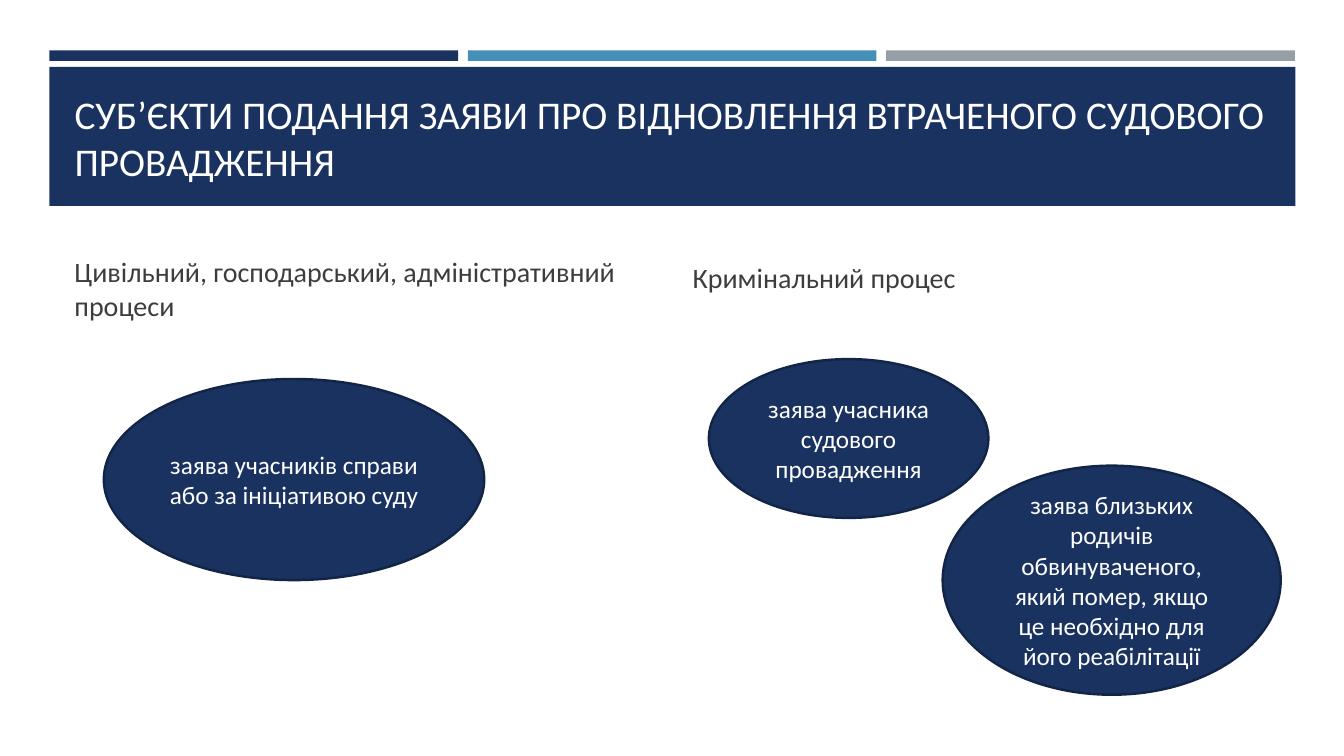
from pptx import Presentation
from pptx.dml.color import RGBColor
from pptx.enum.shapes import MSO_SHAPE
from pptx.enum.text import MSO_ANCHOR, MSO_AUTO_SIZE, PP_ALIGN
from pptx.util import Inches, Pt

RECT, OVAL = MSO_SHAPE.RECTANGLE, MSO_SHAPE.OVAL
TOP, MID, LOW = MSO_ANCHOR.TOP, MSO_ANCHOR.MIDDLE, MSO_ANCHOR.BOTTOM
LEFT, MIDDLE = PP_ALIGN.LEFT, PP_ALIGN.CENTER
FIXED = MSO_AUTO_SIZE.NONE
TITLE_ONLY = 5
COLORS = {"navy": "1A3260", "edge": "132547", "blue": "4590B8",
          "gray": "969FA7", "white": "FFFFFF", "ink": "3D3D3D"}


class Deck:
    """Draws styled items on one slide, placed in percent of its size."""

    def __init__(self):
        self.prs = Presentation()
        self.prs.slide_width = Inches(13.33)
        self.prs.slide_height = Inches(7.5)
        layout = self.prs.slide_layouts[TITLE_ONLY]
        self.slide = self.prs.slides.add_slide(layout)
        self.shapes = self.slide.shapes

    def color(self, name):
        return RGBColor.from_string(COLORS[name])

    def place(self, x, y, w, h):
        wide, high = self.prs.slide_width, self.prs.slide_height
        return [int(part * size / 100) for part, size in
                ((x, wide), (y, high), (w, wide), (h, high))]

    def letter(self, shape, text, size, color, align, anchor):
        frame = shape.text_frame
        frame.text = text
        look = {"word_wrap": True, "auto_size": FIXED,
                "vertical_anchor": anchor}
        for key, value in look.items():
            setattr(frame, key, value)
        para = frame.paragraphs[0]
        para.alignment = align
        font = para.runs[0].font
        for key, value in {"name": "Calibri", "size": Pt(size)}.items():
            setattr(font, key, value)
        font.color.rgb = self.color(color)

    def form(self, kind, box, fill):
        shape = self.shapes.add_shape(kind, *self.place(*box))
        shape.shadow.inherit = False
        shape.fill.solid()
        shape.fill.fore_color.rgb = self.color(fill)
        shape.line.fill.background()
        return shape

    def title(self, text, box):
        shape = self.shapes.title
        keys = ("left", "top", "width", "height")
        for key, value in zip(keys, self.place(*box)):
            setattr(shape, key, value)
        self.letter(shape, text, 28, "white", LEFT, LOW)
        shape.element.getparent().append(shape.element)

    def label(self, text, box):
        shape = self.shapes.add_textbox(*self.place(*box))
        self.letter(shape, text, 20, "ink", LEFT, TOP)

    def oval(self, text, box):
        shape = self.form(OVAL, box, "navy")
        shape.line.color.rgb = self.color("edge")
        shape.line.width = Pt(1.75)
        self.letter(shape, text, 18, "white", MIDDLE, MID)


def main():
    deck = Deck()
    for col, fill in enumerate(("navy", "blue", "gray")):
        deck.form(RECT, (3.68 + 31.13 * col, 6.67, 30.4, 1.4), fill)
    deck.form(RECT, (3.68, 8.85, 92.7, 18.4), "navy")
    deck.title("СУБ’ЄКТИ ПОДАННЯ ЗАЯВИ ПРО ВІДНОВЛЕННЯ ВТРАЧЕНОГО "
               "СУДОВОГО ПРОВАДЖЕННЯ", (4.8, 10.67, 90.5, 14.4))

    heads = ((33.07, "Цивільний, господарський, адміністративний процеси"),
             (33.87, "Кримінальний процес"))
    for col, (top, text) in enumerate(heads):
        deck.label(text, (4.8 + 46 * col, top, 44.5, 11))

    ovals = (
        ("заява учасників справи або за ініціативою суду",
         (7.73, 50.13, 28.3, 26.6)),
        ("заява учасника судового провадження",
         (52.74, 47.5, 20.8, 21)),
        ("заява близьких родичів обвинуваченого, який помер, "
         "якщо це необхідно для його реабілітації",
         (70.14, 61.6, 25.15, 30.3)),
    )
    for text, box in ovals:
        deck.oval(text, box)
    deck.prs.save("out.pptx")


if __name__ == "__main__":
    main()
